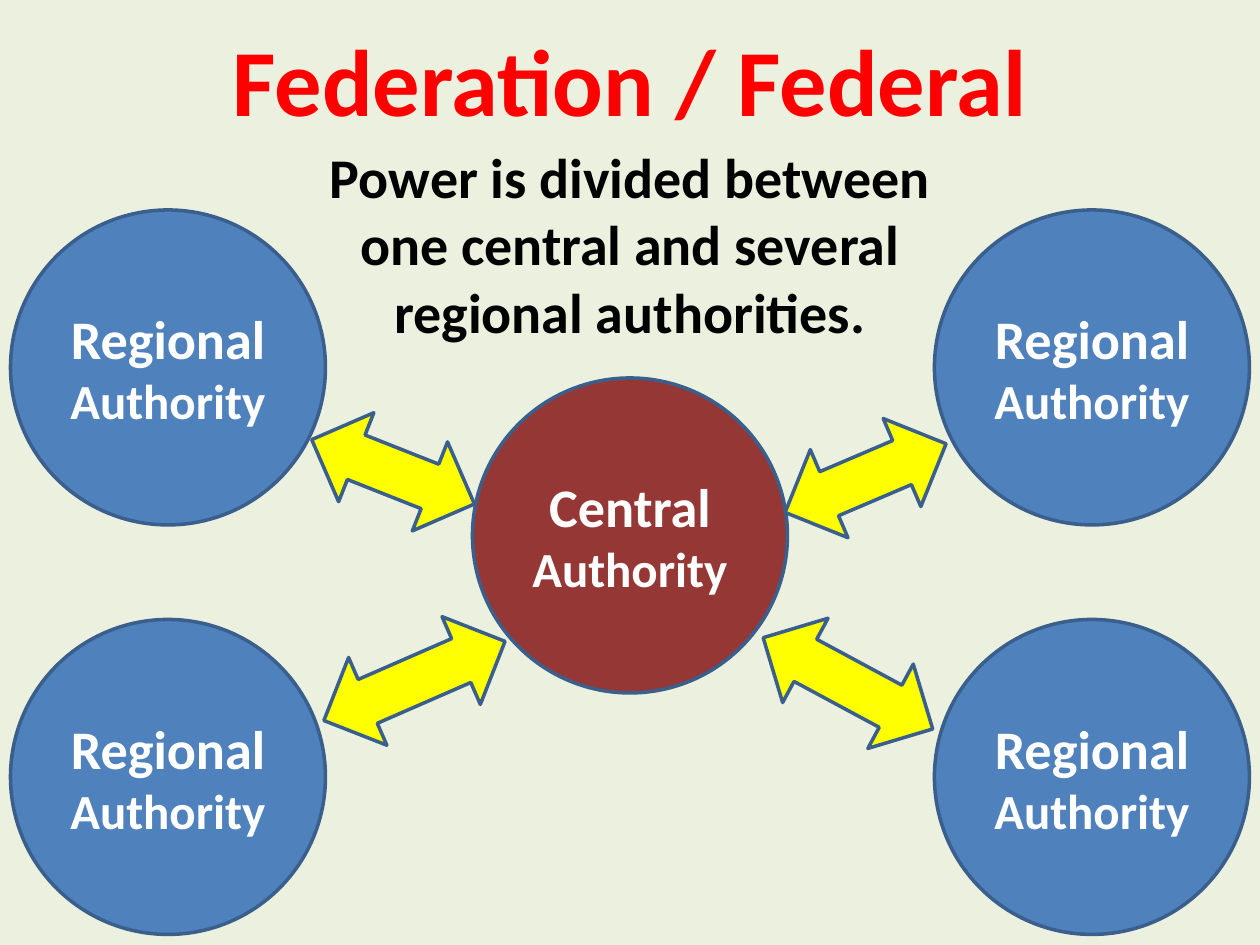
from pptx import Presentation
from pptx.dml.color import RGBColor
from pptx.enum.shapes import MSO_SHAPE as Shape
from pptx.enum.text import MSO_ANCHOR as Anchor, PP_ALIGN as Align
from pptx.util import Pt

OUTLINE = "3A5F8C"
DIAMETER = 180


def color(hex_text):
    return RGBColor.from_string(hex_text)


def add_span(para, text, size=32, ink="000000"):
    span = para.add_run()
    span.text = text
    span.font.name = "Calibri"
    span.font.size = Pt(size)
    span.font.bold = True
    span.font.color.rgb = color(ink)


def add_text(page, text, left, top, width, height, inset_top=3.6, **style):
    box = page.shapes.add_textbox(Pt(left), Pt(top), Pt(width), Pt(height))
    frame = box.text_frame
    frame.word_wrap = True
    frame.margin_top = Pt(inset_top)
    para = frame.paragraphs[0]
    para.alignment = Align.CENTER
    add_span(para, text, **style)


def add_filled_shape(page, kind, left, top, width, height, fill):
    shape = page.shapes.add_shape(kind, Pt(left), Pt(top), Pt(width), Pt(height))
    shape.shadow.inherit = False
    shape.fill.solid()
    shape.fill.fore_color.rgb = color(fill)
    shape.line.color.rgb = color(OUTLINE)
    shape.line.width = Pt(2)
    return shape


def add_authority(page, level, left, top, fill="4F81BD"):
    circle = add_filled_shape(page, Shape.OVAL, left, top, DIAMETER, DIAMETER, fill)
    frame = circle.text_frame
    frame.word_wrap = True
    frame.vertical_anchor = Anchor.MIDDLE
    para = frame.paragraphs[0]
    para.alignment = Align.CENTER
    add_span(para, level + " ", size=31, ink="FFFFFF")
    add_span(para, "Authority", size=28, ink="FFFFFF")


def add_arrow(page, left, top, length, angle):
    arrow = add_filled_shape(page, Shape.UP_DOWN_ARROW, left, top, 54.7, length, "FFFF00")
    arrow.rotation = angle


def main():
    deck = Presentation()
    deck.slide_width, deck.slide_height = Pt(720), Pt(540)
    page = deck.slides.add_slide(deck.slide_layouts[6])
    page.background.fill.solid()
    page.background.fill.fore_color.rgb = color("EBF1DE")

    # Title
    add_text(page, "Federation / Federal", 0, 6, 720, 62.6,
             inset_top=6.8, size=54, ink="FF0000")

    # Central authority with a regional one in each corner
    add_authority(page, "Central", 270, 216, fill="953735")
    for left in (6, 534):
        for top in (120, 354):
            add_authority(page, "Regional", left, top)

    # Two-way arrows between the centre and the regions
    for left, top, length, angle in (
        (197.3, 219.6, 100, 291.6),
        (209.5, 332.6, 113, 246.4),
        (467.3, 223.2, 100, 246.9),
        (457.2, 335.5, 110, 118.3),
    ):
        add_arrow(page, left, top, length, angle)

    # Definition
    add_text(page, "Power is divided between one central and several regional authorities.",
             180, 78, 360, 124)

    deck.save("out.pptx")


if __name__ == "__main__":
    main()
